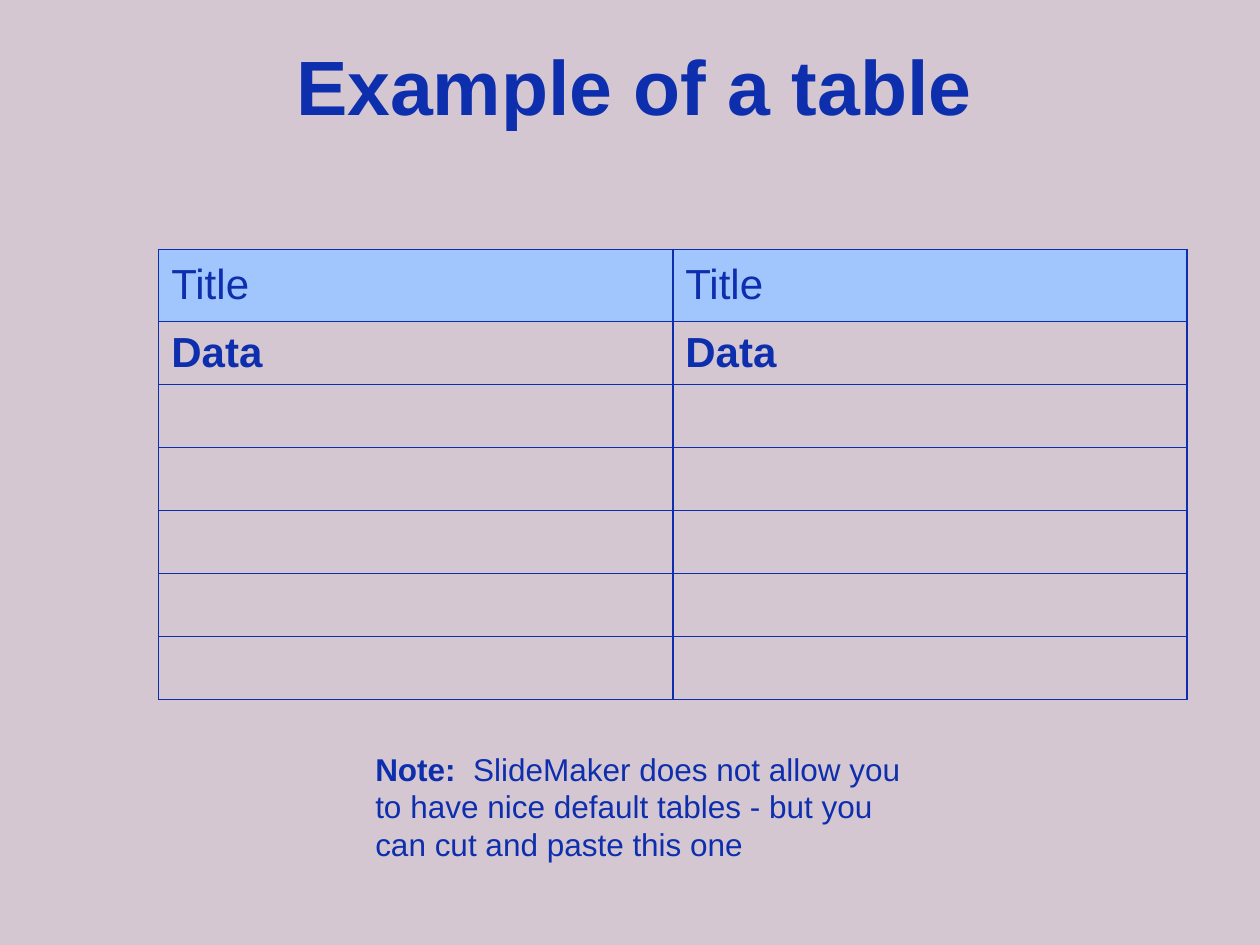
"""Build a slide with a titled two-column table and a note."""
import dataclasses
import typing

import lxml.etree
import pptx
import pptx.dml.color
import pptx.enum.text
import pptx.oxml.ns
import pptx.util

WIDE, HIGH = 10, 7.5


@dataclasses.dataclass(frozen=True)
class Theme:
    """Colours, font and type sizes."""
    back: str = "D5C7D1"
    ink: str = "0E2FAD"
    head: str = "A1C6FD"
    face: str = "Arial"
    title: int = 44
    cell: int = 24
    note: int = 18
    rule: int = 1


@dataclasses.dataclass(frozen=True)
class Box:
    """A place given in shares of the slide's size."""
    left: float
    top: float
    width: float
    height: float

    def frame(self) -> dict[str, int]:
        """Return the place as shape attributes."""
        inch = pptx.util.Inches
        return {"left": inch(self.left * WIDE), "top": inch(self.top * HIGH),
                "width": inch(self.width * WIDE), "height": inch(self.height * HIGH)}


@dataclasses.dataclass(frozen=True)
class Row:
    """One table row."""
    texts: tuple[str, str] = ("", "")
    high: float = 0.5
    bold: bool = False
    fill: str = ""


THEME = Theme()
TITLE = Box(0.05, 0.28 / HIGH, 0.907, 0.79 / HIGH)
GRID = Box(0.126, 1.98 / HIGH, 0.816, 3.58 / HIGH)
NOTE = Box(0.288, 5.9 / HIGH, 0.449, 1 / HIGH)
ROWS = [Row(("Title", "Title"), 0.57, fill=THEME.head),
        Row(("Data", "Data"), bold=True)] + [Row()] * 5


def apply(item: typing.Any, values: dict[str, typing.Any]) -> None:
    """Set each named value on the item."""
    for name, value in values.items():
        setattr(item, name, value)


def style(font: typing.Any, size: int, bold: bool) -> None:
    """Give a font the theme's face and ink."""
    apply(font, {"name": THEME.face, "size": pptx.util.Pt(size), "bold": bold})
    font.color.rgb = pptx.dml.color.RGBColor.from_string(THEME.ink)


def paint(fill: typing.Any, tone: str) -> None:
    """Fill with a tone, or with nothing."""
    if tone:
        fill.solid()
        fill.fore_color.rgb = pptx.dml.color.RGBColor.from_string(tone)
    else:
        fill.background()


def edge(cell: typing.Any) -> None:
    """Rule all four sides of a cell."""
    qn = pptx.oxml.ns.qn
    props = cell._tc.get_or_add_tcPr()
    for side in "LRTB":
        line = lxml.etree.SubElement(props, qn(f"a:ln{side}"),
                                     w=str(pptx.util.Pt(THEME.rule)))
        solid = lxml.etree.SubElement(line, qn("a:solidFill"))
        lxml.etree.SubElement(solid, qn("a:srgbClr"), val=THEME.ink)


def head(slide: typing.Any, text: str) -> None:
    """Place and format the title."""
    shape = slide.shapes.title
    apply(shape, TITLE.frame())
    apply(shape.text_frame, {
        "text": text, "word_wrap": True,
        "auto_size": pptx.enum.text.MSO_AUTO_SIZE.NONE,
        "vertical_anchor": pptx.enum.text.MSO_ANCHOR.MIDDLE})
    line = shape.text_frame.paragraphs[0]
    line.alignment = pptx.enum.text.PP_ALIGN.CENTER
    style(line.runs[0].font, THEME.title, True)


def grid(slide: typing.Any, rows: list[Row]) -> None:
    """Draw the table row by row."""
    table = slide.shapes.add_table(len(rows), 2, **GRID.frame()).table
    apply(table, {"first_row": False, "horz_banding": False})
    for line, row in zip(table.rows, rows):
        line.height = pptx.util.Inches(row.high)
        for cell, text in zip(line.cells, row.texts):
            edge(cell)
            paint(cell.fill, row.fill)
            cell.vertical_anchor = pptx.enum.text.MSO_ANCHOR.MIDDLE
            if text:
                cell.text = text
                style(cell.text_frame.paragraphs[0].runs[0].font, THEME.cell, row.bold)


def note(slide: typing.Any, parts: list[tuple[str, bool]]) -> None:
    """Write the note from plain and bold parts."""
    frame = slide.shapes.add_textbox(**NOTE.frame()).text_frame
    apply(frame, {"word_wrap": True,
                  "auto_size": pptx.enum.text.MSO_AUTO_SIZE.SHAPE_TO_FIT_TEXT})
    for text, bold in parts:
        run = frame.paragraphs[0].add_run()
        run.text = text
        style(run.font, THEME.note, bold)


def main() -> None:
    """Build and save the deck."""
    deck = pptx.Presentation()
    apply(deck, {"slide_width": pptx.util.Inches(WIDE),
                 "slide_height": pptx.util.Inches(HIGH)})
    slide = deck.slides.add_slide(deck.slide_layouts.get_by_name("Title Only"))
    paint(slide.background.fill, THEME.back)
    head(slide, "Example of a table")
    grid(slide, ROWS)
    note(slide, [("Note:  ", True),
                 ("SlideMaker does not allow you to have nice default tables"
                  " - but you can cut and paste this one", False)])
    deck.save("out.pptx")


if __name__ == "__main__":
    main()
